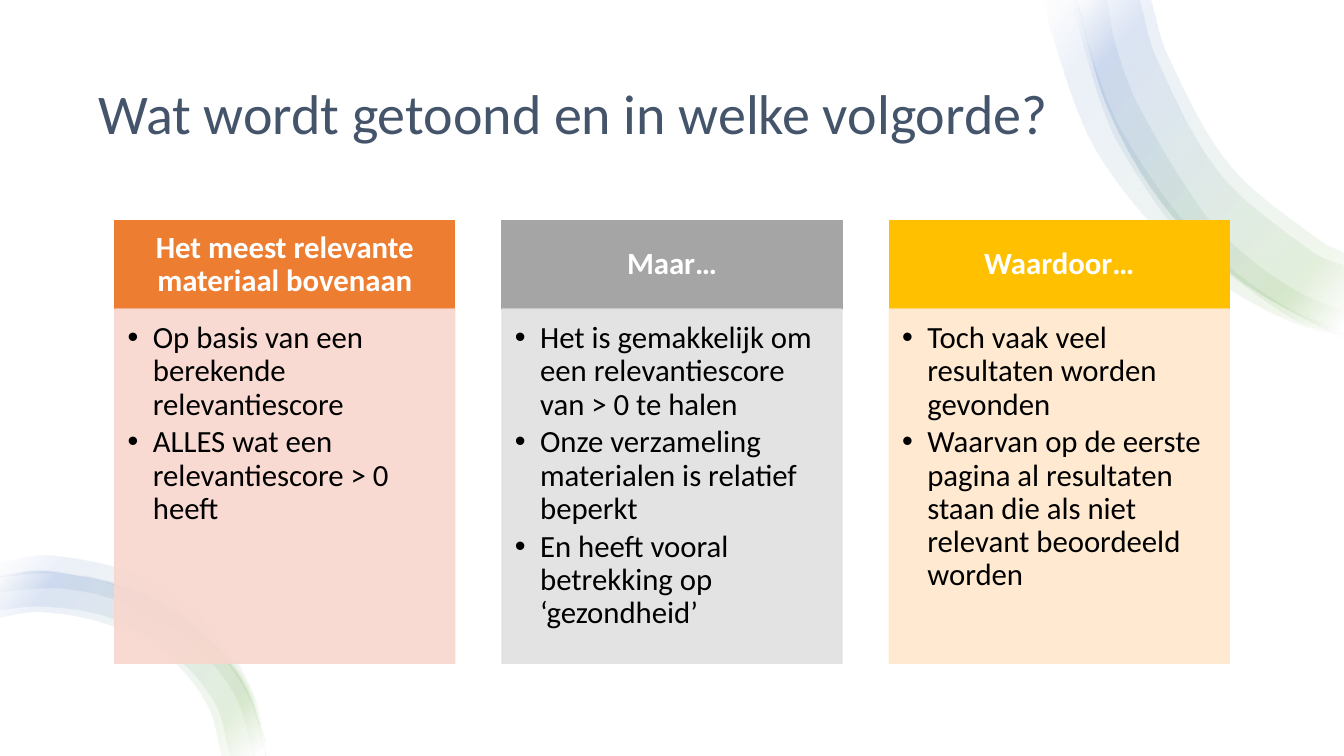
"""Build a slide with three headed columns and curved ribbons in two corners."""
from math import dist

from lxml import etree
from pptx import Presentation
from pptx.dml.color import RGBColor
from pptx.enum.shapes import MSO_SHAPE
from pptx.enum.text import MSO_ANCHOR, MSO_AUTO_SIZE, PP_ALIGN
from pptx.oxml.ns import qn
from pptx.util import Pt

RECTANGLE = MSO_SHAPE.RECTANGLE
TOP, MIDDLE = MSO_ANCHOR.TOP, MSO_ANCHOR.MIDDLE
LEFT, CENTER = PP_ALIGN.LEFT, PP_ALIGN.CENTER
NO_AUTOFIT = MSO_AUTO_SIZE.NONE

WHITE = RGBColor(0xFF, 0xFF, 0xFF)
BLACK = RGBColor(0, 0, 0)
SLATE = RGBColor(0x44, 0x54, 0x6A)
ORANGE = RGBColor(0xED, 0x7D, 0x31)
PINK = RGBColor(0xF8, 0xD7, 0xCE)
GRAY = RGBColor(0xA5, 0xA5, 0xA5)
PALE_GRAY = RGBColor(0xE1, 0xE1, 0xE1)
GOLD = RGBColor(0xFF, 0xC0, 0x00)
CREAM = RGBColor(0xFF, 0xE8, 0xCC)
GREEN = RGBColor(0x70, 0xAD, 0x47)
BLUE = RGBColor(0x44, 0x72, 0xC4)

TITLE = "Wat wordt getoond en in welke volgorde?"
COLUMNS = [
    ("Het meest relevante materiaal bovenaan", ORANGE, PINK, [
        "Op basis van een berekende relevantiescore",
        "ALLES wat een relevantiescore > 0 heeft"]),
    ("Maar…", GRAY, PALE_GRAY, [
        "Het is gemakkelijk om een relevantiescore van > 0 te halen",
        "Onze verzameling materialen is relatief beperkt",
        "En heeft vooral betrekking op ‘gezondheid’"]),
    ("Waardoor…", GOLD, CREAM, [
        "Toch vaak veel resultaten worden gevonden",
        "Waarvan op de eerste pagina al resultaten staan die als niet "
        "relevant beoordeeld worden"]),
]

TOP_EDGE = [(769, 0), (791, 77), (829, 144), (881, 197), (942, 233), (960, 239)]
BOTTOM_EDGE = [(0, 412), (29, 408), (84, 418), (133, 444), (170, 482),
               (189, 529), (189, 540)]
RIBBONS = [
    ([(747, 0), (750, 19), (776, 94), (804, 138), (839, 176), (879, 207),
      (923, 230), (960, 241)],
     [(960, 236), (926, 223), (886, 197), (850, 163), (821, 125), (796, 83),
      (779, 37), (770, 0)]),
    (TOP_EDGE, [(960, 181), (941, 171), (878, 118), (834, 40), (822, 0)]),
    ([(767, 0), (769, 14), (791, 86), (815, 129), (845, 168), (921, 226),
      (960, 240)],
     [(960, 222), (929, 209), (892, 184), (860, 152), (813, 75), (797, 32),
      (791, 0)]),
    (TOP_EDGE, [(960, 190), (937, 180), (871, 124), (826, 42), (814, 0)]),
    (BOTTOM_EDGE, [(158, 540), (148, 504), (120, 469), (77, 446), (29, 437),
                   (0, 441)]),
    (BOTTOM_EDGE, [(164, 540), (153, 502), (122, 466), (78, 441), (29, 433),
                   (0, 436)]),
    ([(0, 411), (36, 408), (102, 423), (146, 451), (178, 493), (189, 540)],
     [(181, 540), (168, 498), (138, 460), (96, 434), (48, 421), (0, 423)]),
    ([(0, 402), (37, 397), (107, 414), (151, 449), (180, 495), (190, 540)],
     [(189, 540), (176, 496), (144, 454), (100, 426), (50, 410), (0, 412)]),
]
RIBBON_STOPS = [(2, WHITE), (16, GREEN), (85, BLUE), (100, WHITE)]
RIBBON_ANGLE = 140
RIBBON_OPACITY = 10

PAGE_WIDTH, PAGE_HEIGHT = 960, 540
COLUMN_LEFT, COLUMN_WIDTH, COLUMN_PITCH = 82, 242.8, 276.6
HEADER_TOP, HEADER_HEIGHT, BODY_HEIGHT = 157.6, 63.2, 253
BODY_OPACITY = 90


def set_opacity(color_element, percent):
    """Make one colour element partly transparent."""
    etree.SubElement(color_element, qn("a:alpha")).set("val", str(percent * 1000))


def curve_controls(points):
    """Return two handles and an end for each stretch of a smooth curve."""
    padded = [points[0], *points, points[-1]]
    slopes = [
        [(c - a) / (dist(before, here) + dist(here, after))
         for a, c in zip(before, after)]
        for before, here, after in zip(padded, padded[1:], padded[2:])]
    curves = []
    for start, end, leave, arrive in zip(points, points[1:], slopes, slopes[1:]):
        third = dist(start, end) / 3
        curves.append((
            [a + slope * third for a, slope in zip(start, leave)],
            [b - slope * third for b, slope in zip(end, arrive)],
            end))
    return curves


def bend_lines(ribbon, curves):
    """Turn the straight stretches of an outline into the given curves."""
    lines = list(ribbon.element.iter(qn("a:lnTo")))
    for line, curve in zip(lines, curves):
        if curve is None:
            continue
        line.tag_name = None
        bend = etree.Element(qn("a:cubicBezTo"))
        for x, y in curve:
            point = etree.SubElement(bend, qn("a:pt"))
            point.set("x", str(Pt(x) - ribbon.left))
            point.set("y", str(Pt(y) - ribbon.top))
        line.getparent().replace(line, bend)


def add_ribbon(page, outer, inner):
    """Draw one translucent band between two curved edges."""
    outline = [(Pt(x), Pt(y)) for x, y in outer + inner]
    builder = page.shapes.build_freeform(*outline[0])
    builder.add_line_segments(outline[1:], close=True)
    ribbon = builder.convert_to_shape()
    bend_lines(ribbon, [*curve_controls(outer), None, *curve_controls(inner)])
    ribbon.shadow.inherit = False
    ribbon.line.fill.background()
    ribbon.fill.gradient()
    ribbon.fill.gradient_angle = RIBBON_ANGLE
    stops = next(ribbon.element.iter(qn("a:gsLst")))
    for stop in list(stops):
        stops.remove(stop)
    for position, color in RIBBON_STOPS:
        stop = etree.SubElement(stops, qn("a:gs"))
        stop.set("pos", str(position * 1000))
        color_element = etree.SubElement(stop, qn("a:srgbClr"))
        color_element.set("val", str(color))
        set_opacity(color_element, RIBBON_OPACITY)


def write_text(box, lines, size=22, color=BLACK, bold=False, align=LEFT,
               anchor=TOP, insets=(7.2, 3.6, 7.2, 3.6), after=0, bullet=False):
    """Fill a shape with formatted paragraphs."""
    frame = box.text_frame
    frame.auto_size = NO_AUTOFIT
    frame.word_wrap = True
    frame.vertical_anchor = anchor
    (frame.margin_left, frame.margin_top,
     frame.margin_right, frame.margin_bottom) = map(Pt, insets)
    for index, line in enumerate(lines):
        para = frame.add_paragraph() if index else frame.paragraphs[0]
        para.alignment = align
        para.line_spacing = 0.9
        para.space_after = Pt(after)
        span = para.add_run()
        span.text = line
        span.font.name = "Calibri"
        span.font.size = Pt(size)
        span.font.bold = bold
        span.font.color.rgb = color
        if bullet:
            properties = para._p.get_or_add_pPr()
            properties.set("marL", str(Pt(18)))
            properties.set("indent", str(-Pt(18)))
            etree.SubElement(properties, qn("a:buFont")).set("typeface", "Arial")
            etree.SubElement(properties, qn("a:buChar")).set("char", "•")


def add_panel(page, left, top, width, height, color, opacity=100, outlined=True):
    """Add one filled rectangle."""
    panel = page.shapes.add_shape(RECTANGLE, *map(Pt, (left, top, width, height)))
    panel.shadow.inherit = False
    panel.fill.solid()
    panel.fill.fore_color.rgb = color
    if outlined:
        panel.line.color.rgb = color
        panel.line.width = Pt(1)
    else:
        panel.line.fill.background()
    if opacity < 100:
        for color_element in panel.element.spPr.iter(qn("a:srgbClr")):
            set_opacity(color_element, opacity)
    return panel


def main():
    """Build and save the deck."""
    deck = Presentation()
    deck.slide_width, deck.slide_height = Pt(PAGE_WIDTH), Pt(PAGE_HEIGHT)
    page = deck.slides.add_slide(deck.slide_layouts[5])

    title = page.shapes.title
    title.left, title.top, title.width, title.height = map(Pt, (63, 36, 833, 94))
    write_text(title, [TITLE], size=40, color=SLATE, anchor=MIDDLE)
    backdrop = add_panel(page, 0, 0, PAGE_WIDTH, PAGE_HEIGHT, WHITE, outlined=False)
    title.element.addprevious(backdrop.element)

    for outer, inner in RIBBONS:
        add_ribbon(page, outer, inner)

    for index, (heading, strong, pale, points) in enumerate(COLUMNS):
        left = COLUMN_LEFT + index * COLUMN_PITCH
        header = add_panel(page, left, HEADER_TOP, COLUMN_WIDTH, HEADER_HEIGHT, strong)
        write_text(header, [heading], color=WHITE, bold=True, align=CENTER,
                   anchor=MIDDLE, insets=(12.3, 7, 12.3, 7))
        body = add_panel(page, left, HEADER_TOP + HEADER_HEIGHT, COLUMN_WIDTH,
                         BODY_HEIGHT, pale, BODY_OPACITY)
        write_text(body, points, insets=(9.2, 9.2, 12.3, 13.9), after=3.3, bullet=True)

    deck.save("out.pptx")


if __name__ == "__main__":
    main()
